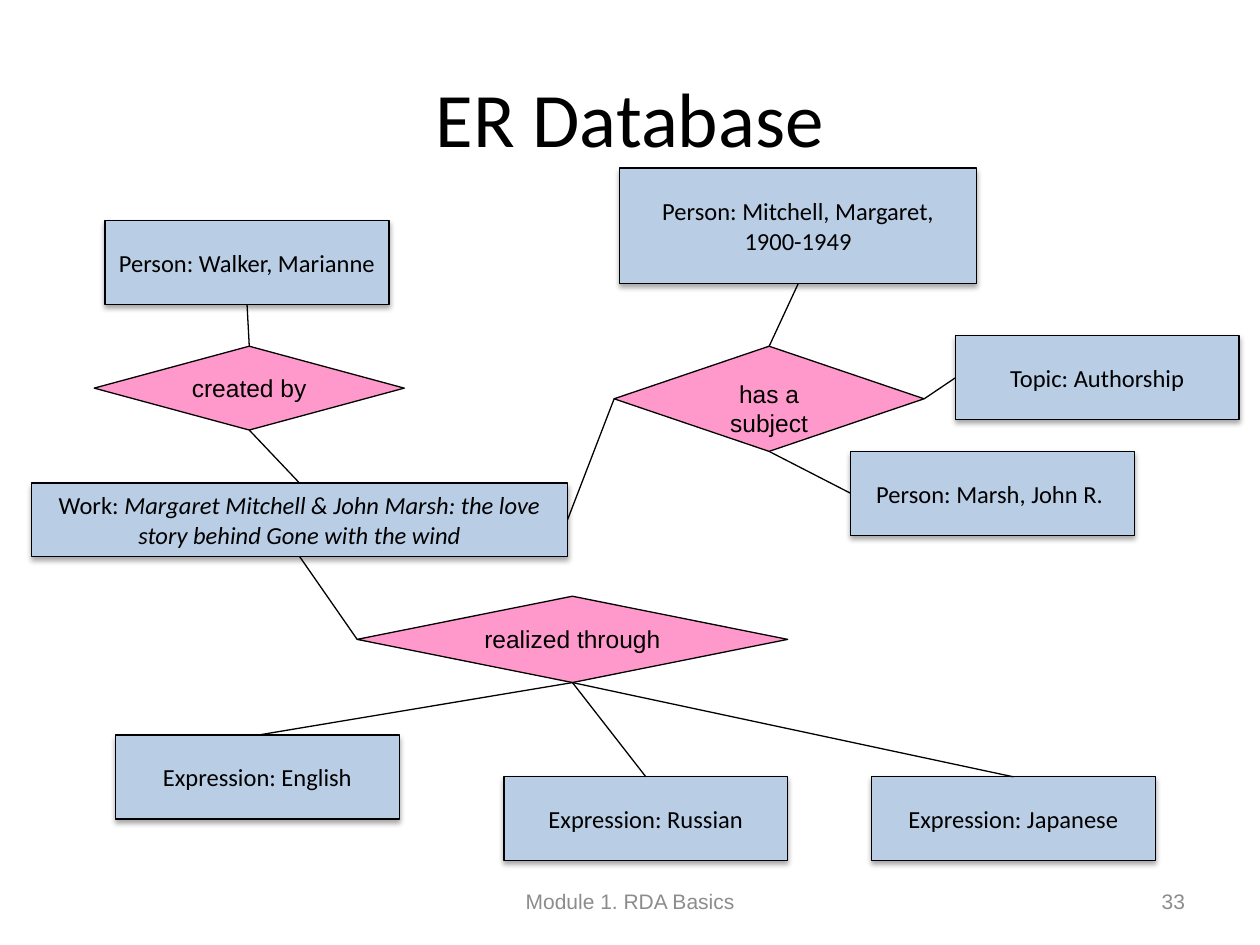
from dataclasses import dataclass

from lxml.etree import SubElement as Sub
from pptx import Presentation
from pptx.dml.color import RGBColor as Rgb
from pptx.enum.shapes import MSO_CONNECTOR as Link, MSO_SHAPE as Kind
from pptx.enum.text import MSO_ANCHOR as Anchor, PP_ALIGN as Align
from pptx.oxml.ns import qn
from pptx.util import Cm, Pt


@dataclass(frozen=True)
class Theme:
    ink: Rgb = Rgb(0, 0, 0)
    gray: Rgb = Rgb(0x8C, 0x8C, 0x8C)
    blue: Rgb = Rgb(0xB9, 0xCD, 0xE5)
    pink: Rgb = Rgb(0xFF, 0x99, 0xCC)
    sans: str = "Arial"
    main: str = "Calibri"
    head: Pt = Pt(44)
    body: Pt = Pt(14)
    foot: Pt = Pt(12)
    line: Pt = Pt(0.75)


THEME = Theme()
TOP, LEFT, BOTTOM, RIGHT = range(4)
WIDE, HIGH = 5.72, 1.69

ENTITIES = {
    "walker": ("Person: Walker, Marianne", "", 2.12, 4.45, WIDE, HIGH),
    "mitchell": ("Person: Mitchell, Margaret, 1900-1949", "", 12.49, 3.39, 7.2, 2.33),
    "topic": ("Topic: Authorship", "", 19.26, 6.77, WIDE, HIGH),
    "marsh": ("Person: Marsh, John R. ", "", 17.15, 9.1, WIDE, HIGH),
    "work": (
        "Work: ",
        "Margaret Mitchell & John Marsh: the love story behind Gone with the wind",
        0.64, 9.74, 10.8, 1.48,
    ),
    "english": ("Expression: English", "", 2.33, 14.82, WIDE, HIGH),
    "russian": ("Expression: Russian", "", 10.16, 15.66, WIDE, HIGH),
    "japanese": ("Expression: Japanese", "", 17.57, 15.66, WIDE, HIGH),
}
RELATIONS = {
    "created": ("created by", 1.9, 6.98, 6.25, 1.69),
    "subject": ("has a subject", 12.38, 6.98, 6.25, 2.12),
    "realized": ("realized through", 7.2, 12.02, 8.68, 1.74),
}
LINKS = [
    ("walker", BOTTOM, "created", TOP),
    ("created", BOTTOM, "work", TOP),
    ("work", RIGHT, "subject", LEFT),
    ("mitchell", BOTTOM, "subject", TOP),
    ("subject", RIGHT, "topic", LEFT),
    ("subject", BOTTOM, "marsh", LEFT),
    ("work", BOTTOM, "realized", LEFT),
    ("realized", BOTTOM, "english", TOP),
    ("realized", BOTTOM, "russian", TOP),
    ("realized", BOTTOM, "japanese", TOP),
]


def write(shape, text, face, size, color, align=Align.CENTER, anchor=Anchor.MIDDLE):
    frame = shape.text_frame
    frame.word_wrap = True
    frame.vertical_anchor = anchor
    par = frame.paragraphs[0]
    par.alignment = align
    par.font.name, par.font.size = face, size
    par.font.color.rgb = color
    par.add_run().text = text
    return par


def add_label(slide, text, box, face, size, color, align=Align.CENTER):
    shape = slide.shapes.add_textbox(*map(Cm, box))
    write(shape, text, face, size, color, align)


def add_node(slide, kind, box, fill):
    shape = slide.shapes.add_shape(kind, *map(Cm, box))
    shape.shadow.inherit = False
    shape.fill.solid()
    shape.fill.fore_color.rgb = fill
    shape.line.color.rgb = THEME.ink
    shape.line.width = THEME.line
    return shape


def add_shadow(shape):
    effects = shape._element.spPr.find(qn("a:effectLst"))
    outer = Sub(effects, qn("a:outerShdw"), blurRad="40000", dist="23000",
                dir="5400000", rotWithShape="0")
    color = Sub(outer, qn("a:srgbClr"), val=str(THEME.ink))
    Sub(color, qn("a:alpha"), val="35000")


def add_entity(slide, text, title, *box):
    shape = add_node(slide, Kind.FLOWCHART_PROCESS, box, THEME.blue)
    add_shadow(shape)
    par = write(shape, text, THEME.main, THEME.body, THEME.ink)
    if title:
        run = par.add_run()
        run.text = title
        run.font.italic = True
    return shape


def add_relation(slide, text, *box):
    shape = add_node(slide, Kind.FLOWCHART_DECISION, box, THEME.pink)
    write(shape, text, THEME.sans, THEME.body, THEME.ink, anchor=Anchor.TOP)
    return shape


def add_link(slide, start, out, end, into):
    link = slide.shapes.add_connector(Link.STRAIGHT, 0, 0, 0, 0)
    link.begin_connect(start, out)
    link.end_connect(end, into)
    link.line.color.rgb = THEME.ink
    link.line.width = THEME.line
    Sub(link._element.spPr, qn("a:effectLst"))


def main():
    deck = Presentation()
    deck.slide_width, deck.slide_height = Cm(25.4), Cm(19.05)
    slide = deck.slides.add_slide(deck.slide_layouts[6])
    add_label(slide, "ER Database", (1.27, 0.76, 22.86, 3.18),
              THEME.main, THEME.head, THEME.ink)
    nodes = {key: add_entity(slide, *item) for key, item in ENTITIES.items()}
    nodes |= {key: add_relation(slide, *item) for key, item in RELATIONS.items()}
    for start, out, end, into in LINKS:
        add_link(slide, nodes[start], out, nodes[end], into)
    foot = THEME.sans, THEME.foot, THEME.gray
    add_label(slide, "Module 1. RDA Basics", (8.68, 17.65, 8.05, 1.02), *foot)
    add_label(slide, "33", (18.21, 17.65, 5.93, 1.02), *foot, Align.RIGHT)
    deck.save("out.pptx")


if __name__ == "__main__":
    main()
